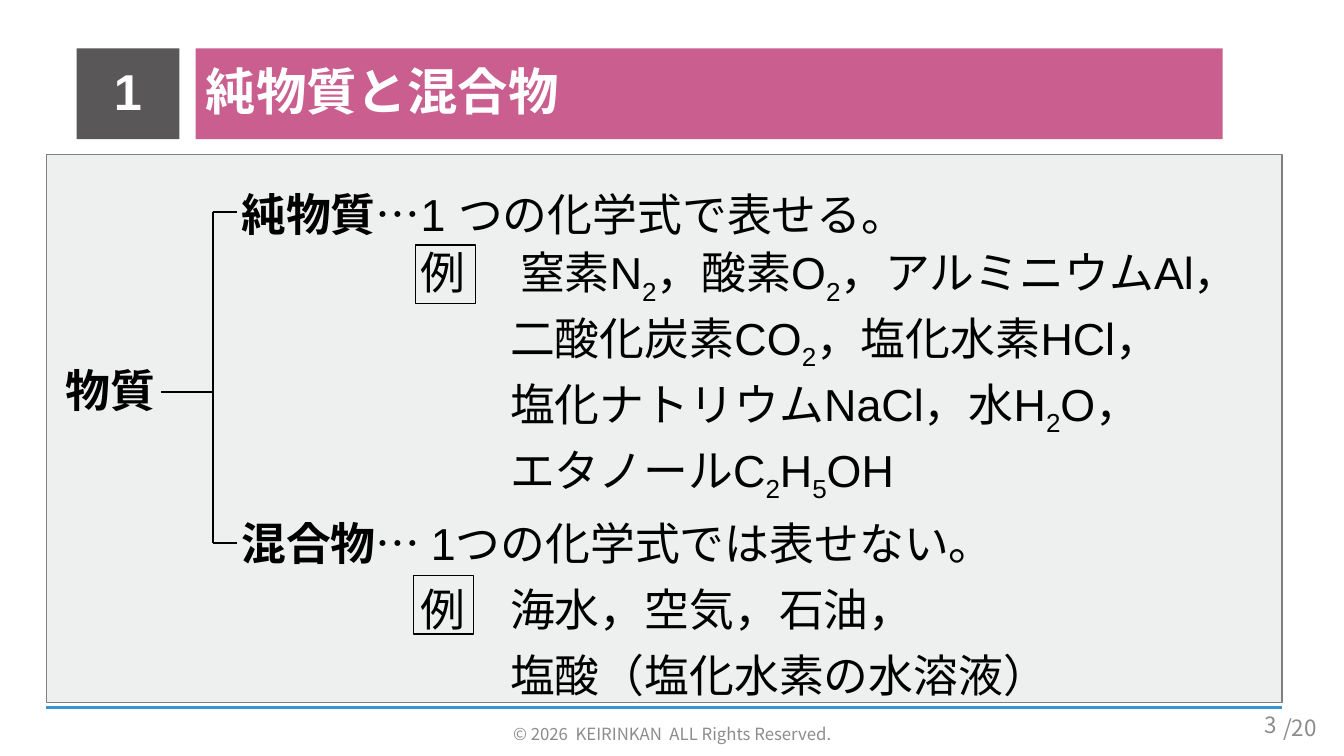
from dataclasses import dataclass

from lxml.etree import SubElement
from pptx import Presentation
from pptx.dml.color import RGBColor
from pptx.enum.lang import MSO_LANGUAGE_ID
from pptx.enum.shapes import MSO_CONNECTOR, MSO_SHAPE
from pptx.enum.text import MSO_ANCHOR, MSO_AUTO_SIZE, PP_ALIGN
from pptx.oxml.ns import qn
from pptx.util import Inches, Pt


@dataclass(frozen=True)
class Theme:
    latin: str = "Arial"
    japanese: str = "Noto Sans CJK JP"
    white: str = "FFFFFF"
    ink: str = "000000"
    muted: str = "8C8C8C"
    panel: str = "EEEFEF"
    panel_edge: str = "808080"
    heading: str = "CA5E8F"
    number: str = "595757"
    rule: str = "3497D2"
    heading_size: int = 36
    body_size: int = 32
    page_size: int = 16
    credit_size: int = 12
    body_pitch: int = 35
    body_gap: int = 12


THEME = Theme()


def write(para, text, size=THEME.body_size, color=THEME.ink, bold=False, latin=THEME.latin):
    """Add text to a paragraph; the character after each underscore is a subscript."""
    plain, *marked = text.split("_")
    pieces = [(plain, False)]
    for piece in marked:
        pieces += [(piece[0], True), (piece[1:], False)]
    for piece, lowered in pieces:
        if not piece:
            continue
        span = para.add_run()
        span.text = piece
        font = span.font
        font.size, font.bold, font.name = Pt(size), bold, latin
        font.color.rgb = RGBColor.from_string(color)
        font.language_id = MSO_LANGUAGE_ID.JAPANESE
        properties = span._r.get_or_add_rPr()
        SubElement(properties, qn("a:ea")).set("typeface", THEME.japanese)
        if lowered:
            properties.set("baseline", "-25000")


class SlideBuilder:
    """Draws on one slide; positions are percentages of its width and height."""

    def __init__(self, deck, theme):
        self.deck, self.theme = deck, theme
        self.page = deck.slides.add_slide(deck.slide_layouts[5])

    def across(self, share):
        return round(self.deck.slide_width * share / 100)

    def down(self, share):
        return round(self.deck.slide_height * share / 100)

    def frame(self, left, top, width, height):
        return self.across(left), self.down(top), self.across(width), self.down(height)

    def rectangle(self, *place, fill=None, line=None):
        box = self.page.shapes.add_shape(MSO_SHAPE.RECTANGLE, *self.frame(*place))
        box.shadow.inherit = False
        if fill:
            box.fill.solid()
            box.fill.fore_color.rgb = RGBColor.from_string(fill)
        else:
            box.fill.background()
        if line:
            box.line.color.rgb = RGBColor.from_string(line)
            box.line.width = Pt(1)
        else:
            box.line.fill.background()
        return box

    def line(self, x1, y1, x2, y2, color, width):
        connector = self.page.shapes.add_connector(
            MSO_CONNECTOR.STRAIGHT,
            self.across(x1), self.down(y1), self.across(x2), self.down(y2))
        connector.line.color.rgb = RGBColor.from_string(color)
        connector.line.width = Pt(width)
        SubElement(connector._element.spPr, qn("a:effectLst"))

    def banner_text(self, box, text, align):
        frame = box.text_frame
        frame.auto_size = MSO_AUTO_SIZE.NONE
        frame.vertical_anchor = MSO_ANCHOR.MIDDLE
        para = frame.paragraphs[0]
        para.alignment, para.line_spacing = align, 0.9
        write(para, text, size=self.theme.heading_size, color=self.theme.white, bold=True)

    def title(self, *place, text):
        box = self.page.shapes.title
        box.left, box.top, box.width, box.height = self.frame(*place)
        box.fill.solid()
        box.fill.fore_color.rgb = RGBColor.from_string(self.theme.heading)
        self.banner_text(box, text, PP_ALIGN.LEFT)

    def footer(self, *place, text, size, align):
        box = self.page.shapes.add_textbox(*self.frame(*place))
        box.text_frame.word_wrap = True
        box.text_frame.vertical_anchor = MSO_ANCHOR.MIDDLE
        para = box.text_frame.paragraphs[0]
        para.alignment = align
        write(para, text, size=size, color=self.theme.muted, latin=self.theme.japanese)

    def body(self, *place, rows):
        """Each row is (first indent, hanging indent, bold term, text), indents in characters."""
        frame = self.page.shapes.add_textbox(*self.frame(*place)).text_frame
        frame.word_wrap = True
        for index, (first, hanging, term, text) in enumerate(rows):
            para = frame.add_paragraph() if index else frame.paragraphs[0]
            em = Pt(self.theme.body_size)
            properties = para._p.get_or_add_pPr()
            properties.set("marL", str(round(em * hanging)))
            properties.set("indent", str(round(em * (first - hanging))))
            para.line_spacing = Pt(self.theme.body_pitch)
            if index:
                para.space_before = Pt(self.theme.body_gap)
            write(para, term, bold=True)
            write(para, text)


def main():
    deck = Presentation()
    deck.slide_width, deck.slide_height = Inches(13.33), Inches(7.5)
    slide = SlideBuilder(deck, THEME)

    slide.footer(73.28, 93.2, 22.5, 5.33, text="3", size=THEME.page_size, align=PP_ALIGN.RIGHT)
    slide.footer(76.2, 93.6, 22.5, 5.33, text="/20", size=THEME.page_size, align=PP_ALIGN.RIGHT)
    slide.rectangle(3.45, 20.4, 91.95, 72.53, fill=THEME.panel, line=THEME.panel_edge)
    slide.title(14.55, 6.4, 76.43, 12, text="純物質と混合物")
    slide.footer(33.15, 94.4, 33.75, 5.33, text="© 2026  KEIRINKAN  ALL Rights Reserved.",
                 size=THEME.credit_size, align=PP_ALIGN.CENTER)
    slide.line(3.45, 93.6, 95.4, 93.6, THEME.rule, 2.25)
    number = slide.rectangle(5.7, 6.4, 7.65, 12, fill=THEME.number)
    slide.banner_text(number, "1", PP_ALIGN.CENTER)

    term, example, detail = 1, 5, 7
    slide.body(13.88, 24.67, 84.9, 69, rows=[
        (term, term, "純物質", "…1 つの化学式で表せる。"),
        (example, detail + 0.22, "", "例\t窒素N_2，酸素O_2，アルミニウムAl，"),
        (detail, detail, "", "二酸化炭素CO_2，塩化水素HCl，"),
        (detail, detail, "", "塩化ナトリウムNaCl，水H_2O，"),
        (detail, detail, "", "エタノールC_2H_5OH"),
        (term, term, "混合物", "… 1つの化学式では表せない。"),
        (example, detail, "", "例\t海水，空気，石油，"),
        (detail, detail, "", "塩酸（塩化水素の水溶液）"),
    ])
    slide.body(4.13, 48, 9, 8, rows=[(0, 0, "物質", "")])
    for left, top in ((30.9, 32.4), (30.75, 76.13)):
        slide.rectangle(left, top, 4.5, 7.73, line=THEME.ink)

    trunk, pure, mixture, root = 15.83, 28, 71.87, 51.87
    slide.line(12, root, trunk, root, THEME.ink, 1.5)
    slide.line(trunk, pure, trunk, mixture, THEME.ink, 1.5)
    for branch in (pure, mixture):
        slide.line(trunk, branch, 17.6, branch, THEME.ink, 1.5)

    deck.save("out.pptx")


if __name__ == "__main__":
    main()
